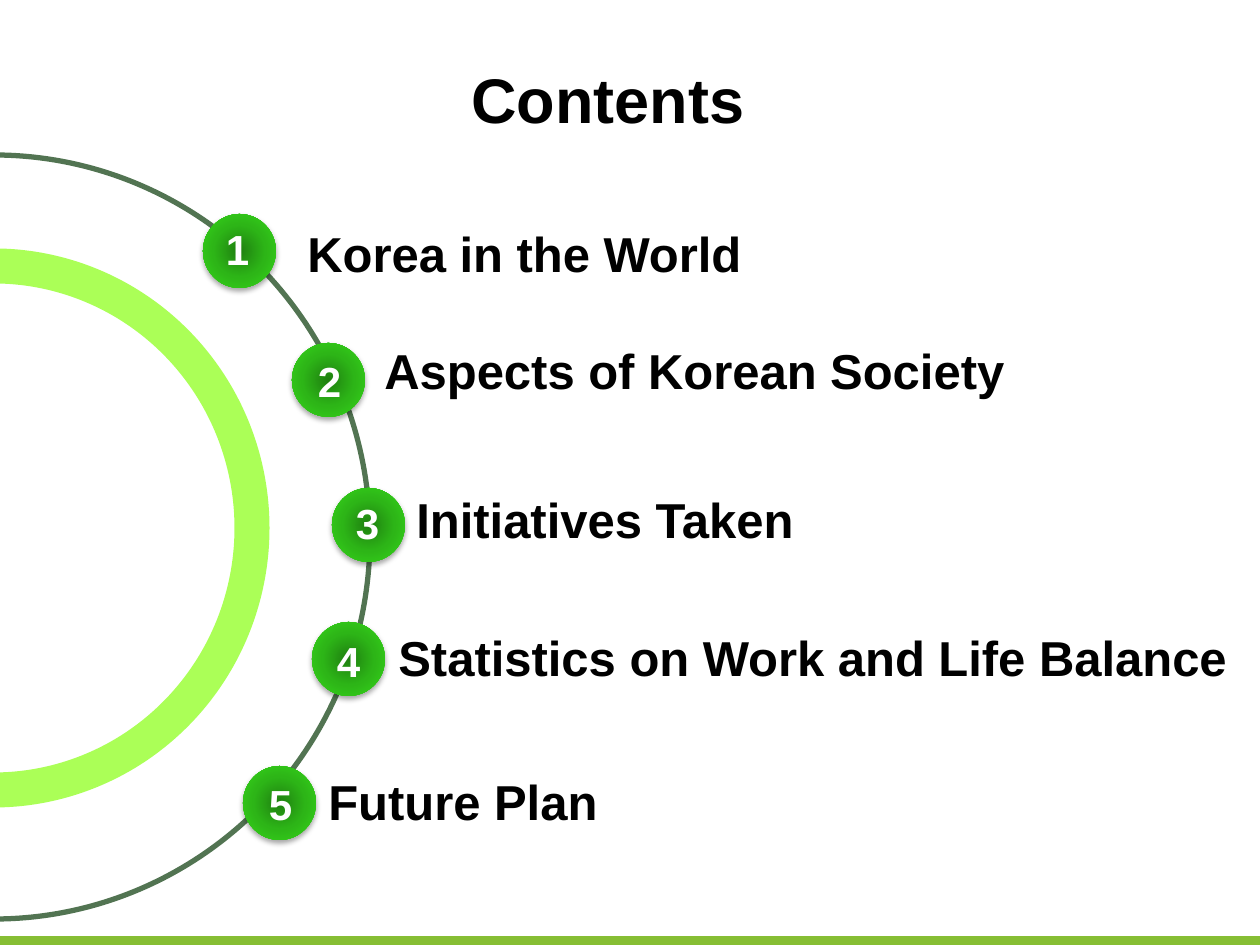
"""Build a contents slide whose numbered badges follow a large ring."""
from dataclasses import dataclass
from typing import Any, NamedTuple

from pptx import Presentation
from pptx import util as u
from pptx.dml.color import RGBColor
from pptx.enum import shapes, text
from pptx.oxml import parse_xml
from pptx.oxml.ns import nsdecls, qn


@dataclass(frozen=True)
class Theme:
    font: str = "Arial"
    ink: str = "000000"
    badge_ink: str = "FFFFFF"
    footer: str = "86BE34"
    outer_ring: str = "003300"
    inner_ring: str = "99FF33"
    badge_stops: tuple = ((0, "1F8010"), (50, "2DB517"), (100, "35D71B"))
    title_size: int = 36
    label_size: int = 28
    number_size: int = 24


class Box(NamedTuple):
    left: int
    top: int
    width: int
    height: int


class Ring(NamedTuple):
    box: Box
    color: str
    weight: int
    opacity: int


class Topic(NamedTuple):
    label: str
    badge: tuple[int, int]
    number: tuple[int, int]
    label_at: tuple[int, int]
    label_width: int


THEME = Theme()
PX = 914400 / 126
SLIDE_SIZE = (1260, 945)
BADGE_SIZE = (73, 74)
NUMBER_SIZE = (49, 63)
LABEL_HEIGHT = 72
TITLE_BOX = Box(221, 24, 774, 107)
FOOTER_BOX = Box(0, 936, 1260, 9)
RINGS = (
    Ring(Box(-382, 155, 752, 764), THEME.outer_ring, 3, 68),
    Ring(Box(-265, 266, 517, 524), THEME.inner_ring, 20, 82),
)
TOPICS = (
    Topic("Korea in the World", (203, 214), (213, 217), (295, 217), 465),
    Topic("Aspects of Korean Society", (292, 343), (305, 349), (372, 334), 654),
    Topic("Initiatives Taken", (332, 488), (343, 491), (404, 483), 587),
    Topic("Statistics on Work and Life Balance", (312, 622), (324, 629), (386, 621), 874),
    Topic("Future Plan", (243, 766), (256, 772), (316, 765), 682),
)


def emu(box: Box) -> list[u.Emu]:
    """Turn a box in px into EMU lengths."""
    return [u.Emu(round(value * PX)) for value in box]


def apply(target: Any, formats: dict[str, Any]) -> None:
    """Set each named format value on the target."""
    for name, value in formats.items():
        setattr(target, name, value)


def write(shape: Any, words: str, size: int, color: str, **paragraph_formats: Any) -> None:
    """Write one bold line of text into a shape."""
    frame = shape.text_frame
    apply(frame, {"auto_size": text.MSO_AUTO_SIZE.NONE, "word_wrap": True,
                  "vertical_anchor": text.MSO_ANCHOR.TOP})
    paragraph = frame.paragraphs[0]
    apply(paragraph, paragraph_formats)
    run = paragraph.add_run()
    run.text = words
    apply(run.font, {"name": THEME.font, "size": u.Pt(size), "bold": True})
    run.font.color.rgb = RGBColor.from_string(color)


def draw_title(slide: Any, words: str) -> None:
    """Place and fill the title placeholder."""
    title = slide.shapes.title
    apply(title, dict(zip(Box._fields, emu(TITLE_BOX))))
    write(title, words, THEME.title_size, THEME.ink,
          alignment=text.PP_ALIGN.CENTER, line_spacing=1.4)


def draw_footer(slide: Any) -> None:
    """Draw the bar along the bottom edge."""
    bar = slide.shapes.add_shape(shapes.MSO_SHAPE.RECTANGLE, *emu(FOOTER_BOX))
    bar.shadow.inherit = False
    bar.fill.solid()
    bar.fill.fore_color.rgb = RGBColor.from_string(THEME.footer)
    bar.line.fill.background()


def draw_ring(slide: Any, ring: Ring) -> None:
    """Draw an unfilled circle with a translucent outline."""
    circle = slide.shapes.add_shape(shapes.MSO_SHAPE.OVAL, *emu(ring.box))
    circle.shadow.inherit = False
    circle.fill.background()
    circle.line.width = u.Pt(ring.weight)
    circle.line.color.rgb = RGBColor.from_string(ring.color)
    color = circle.line._get_or_add_ln().find(".//" + qn("a:srgbClr"))
    color.append(parse_xml(f'<a:alpha {nsdecls("a")} val="{ring.opacity * 1000}"/>'))


def draw_badge(slide: Any, topic: Topic, number: int) -> None:
    """Draw a shaded circle grouped with its number."""
    group = slide.shapes.add_group_shape()
    disc = group.shapes.add_shape(shapes.MSO_SHAPE.OVAL, *emu(Box(*topic.badge, *BADGE_SIZE)))
    stops = "".join(f'<a:gs pos="{position * 1000}"><a:srgbClr val="{color}"/></a:gs>'
                    for position, color in THEME.badge_stops)
    properties = disc._element.spPr
    properties.append(parse_xml(
        f'<a:gradFill {nsdecls("a")} rotWithShape="1"><a:gsLst>{stops}</a:gsLst>'
        '<a:path path="circle"><a:fillToRect l="50000" t="50000" r="50000" b="50000"/>'
        '</a:path></a:gradFill>'))
    disc.line.fill.background()
    disc.shadow.inherit = False
    properties.find(qn("a:effectLst")).append(parse_xml(
        f'<a:outerShdw {nsdecls("a")} blurRad="{u.Pt(3.1)}" dist="{u.Pt(1.8)}" '
        'dir="5400000" rotWithShape="0"><a:srgbClr val="000000">'
        '<a:alpha val="35000"/></a:srgbClr></a:outerShdw>'))
    numeral = group.shapes.add_textbox(*emu(Box(*topic.number, *NUMBER_SIZE)))
    write(numeral, str(number), THEME.number_size, THEME.badge_ink,
          alignment=text.PP_ALIGN.CENTER)


def draw_label(slide: Any, topic: Topic) -> None:
    """Write the topic beside its badge."""
    label = slide.shapes.add_textbox(
        *emu(Box(*topic.label_at, topic.label_width, LABEL_HEIGHT)))
    write(label, topic.label, THEME.label_size, THEME.ink)


def main() -> None:
    """Build and save the slide."""
    deck = Presentation()
    deck.slide_width, deck.slide_height = (u.Emu(round(side * PX)) for side in SLIDE_SIZE)
    slide = deck.slides.add_slide(deck.slide_layouts.get_by_name("Title Only"))
    draw_title(slide, "Contents")
    draw_footer(slide)
    for ring in RINGS:
        draw_ring(slide, ring)
    for number, topic in enumerate(TOPICS, start=1):
        draw_label(slide, topic)
        draw_badge(slide, topic, number)
    deck.save("out.pptx")


if __name__ == "__main__":
    main()
